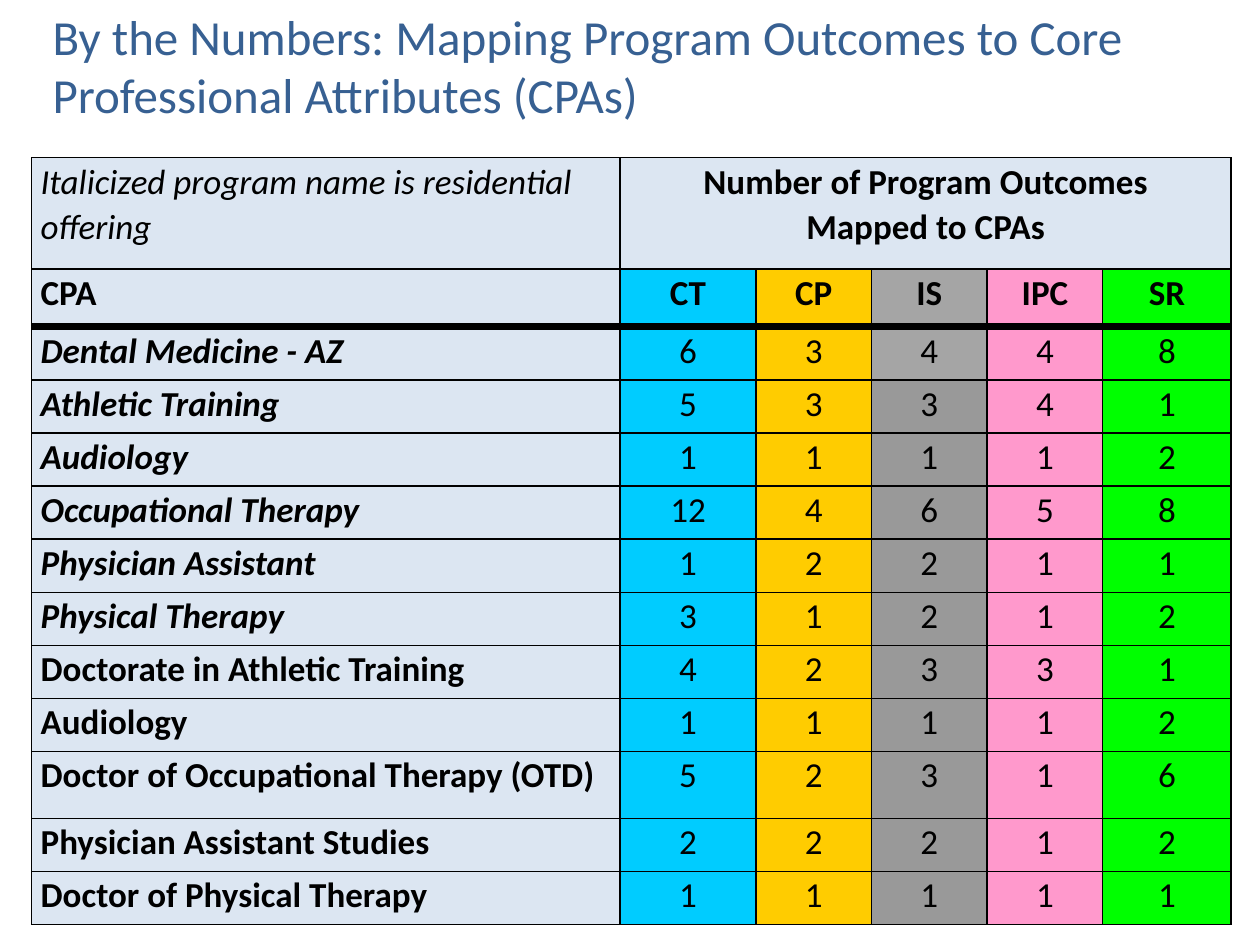
from lxml.etree import SubElement
from pptx import Presentation
from pptx.dml.color import RGBColor
from pptx.enum.text import MSO_ANCHOR, PP_ALIGN
from pptx.oxml.ns import qn
from pptx.util import Cm, Pt

FONT = "Calibri"
BLACK = "000000"
LABEL_FILL = "DCE6F2"
DARK_GRAY, LIGHT_GRAY = "999999", "A5A5A5"
ATTRIBUTES = [
    ("CT", "00CCFF"),
    ("CP", "FFCC00"),
    ("IS", DARK_GRAY),
    ("IPC", "FF99CC"),
    ("SR", "00FF00"),
]
# Program, residential offering, outcomes mapped to each attribute
PROGRAMS = [
    ("Dental Medicine - AZ", True, (6, 3, 4, 4, 8)),
    ("Athletic Training", True, (5, 3, 3, 4, 1)),
    ("Audiology", True, (1, 1, 1, 1, 2)),
    ("Occupational Therapy", True, (12, 4, 6, 5, 8)),
    ("Physician Assistant", True, (1, 2, 2, 1, 1)),
    ("Physical Therapy", True, (3, 1, 2, 1, 2)),
    ("Doctorate in Athletic Training", False, (4, 2, 3, 3, 1)),
    ("Audiology", False, (1, 1, 1, 1, 2)),
    ("Doctor of Occupational Therapy (OTD)", False, (5, 2, 3, 1, 6)),
    ("Physician Assistant Studies", False, (2, 2, 2, 1, 2)),
    ("Doctor of Physical Therapy", False, (1, 1, 1, 1, 1)),
]
HEADER_ROW = 1
FIRST_PROGRAM_ROW = 2
COLUMN_WIDTHS = [11.86, 2.74, 2.33, 2.33, 2.33, 2.59]
ROW_HEIGHTS = [2.24, 1.17] + [1.07] * 8 + [1.35] + [1.07] * 2


def color(hex_string):
    return RGBColor.from_string(hex_string)


def add_run(paragraph, text, size, hex_string, bold=False, italic=False):
    run = paragraph.add_run()
    run.text = text
    font = run.font
    font.name, font.size = FONT, Pt(size)
    font.bold, font.italic = bold, italic
    font.color.rgb = color(hex_string)


def add_title(slide, text):
    box = slide.shapes.add_textbox(Cm(0.81), Cm(0), Cm(24.56), Cm(2.64))
    box.text_frame.word_wrap = True
    add_run(box.text_frame.paragraphs[0], text, 28, "376092")


def set_borders(cell, top=1, bottom=1):
    """Draw black cell borders; widths are in points."""
    properties = cell._tc.get_or_add_tcPr()
    for tag, width in (("a:lnL", 1), ("a:lnR", 1), ("a:lnT", top), ("a:lnB", bottom)):
        line = SubElement(properties, qn(tag), w=str(Pt(width)))
        fill = SubElement(line, qn("a:solidFill"))
        SubElement(fill, qn("a:srgbClr"), val=BLACK)


def fill_cell(cell, lines, hex_string, align=PP_ALIGN.CENTER, bold=False, italic=False):
    cell.fill.solid()
    cell.fill.fore_color.rgb = color(hex_string)
    cell.margin_left = cell.margin_right = Cm(0.18)
    cell.margin_top = cell.margin_bottom = Cm(0)
    cell.vertical_anchor = MSO_ANCHOR.TOP
    frame = cell.text_frame
    for index, text in enumerate(lines):
        paragraph = frame.add_paragraph() if index else frame.paragraphs[0]
        paragraph.alignment = align
        paragraph.line_spacing = 1.07
        add_run(paragraph, text, 20, BLACK, bold, italic)


def add_outcomes_table(slide):
    shape = slide.shapes.add_table(
        len(ROW_HEIGHTS), len(COLUMN_WIDTHS), Cm(0.64), Cm(3.18),
        Cm(sum(COLUMN_WIDTHS)), Cm(sum(ROW_HEIGHTS)))
    table = shape.table
    table.first_row = table.horz_banding = False
    for column, width in zip(table.columns, COLUMN_WIDTHS):
        column.width = Cm(width)
    for index, (row, height) in enumerate(zip(table.rows, ROW_HEIGHTS)):
        row.height = Cm(height)
        for cell in row.cells:
            set_borders(cell,
                        top=4.5 if index == FIRST_PROGRAM_ROW else 1,
                        bottom=4.5 if index == HEADER_ROW else 1)

    table.cell(0, 1).merge(table.cell(0, 5))
    fill_cell(table.cell(0, 0), ["Italicized program name is residential offering"],
              LABEL_FILL, PP_ALIGN.LEFT, italic=True)
    fill_cell(table.cell(0, 1), ["Number of Program Outcomes", "Mapped to CPAs"],
              LABEL_FILL, bold=True)

    names = [name for name, fill in ATTRIBUTES]
    rows = [("CPA", False, names)] + PROGRAMS
    for row, (label, residential, values) in enumerate(rows, HEADER_ROW):
        fill_cell(table.cell(row, 0), [label], LABEL_FILL, PP_ALIGN.LEFT,
                  bold=True, italic=residential)
        for column, (value, (name, fill)) in enumerate(zip(values, ATTRIBUTES), 1):
            if fill == DARK_GRAY and row <= FIRST_PROGRAM_ROW:
                fill = LIGHT_GRAY
            fill_cell(table.cell(row, column), [str(value)], fill, bold=row == HEADER_ROW)


def main():
    presentation = Presentation()
    presentation.slide_width, presentation.slide_height = Cm(25.4), Cm(19.05)
    slide = presentation.slides.add_slide(presentation.slide_layouts[6])
    add_title(slide, "By the Numbers: Mapping Program Outcomes to Core "
                     "Professional Attributes (CPAs)")
    add_outcomes_table(slide)
    presentation.save("out.pptx")


if __name__ == "__main__":
    main()
